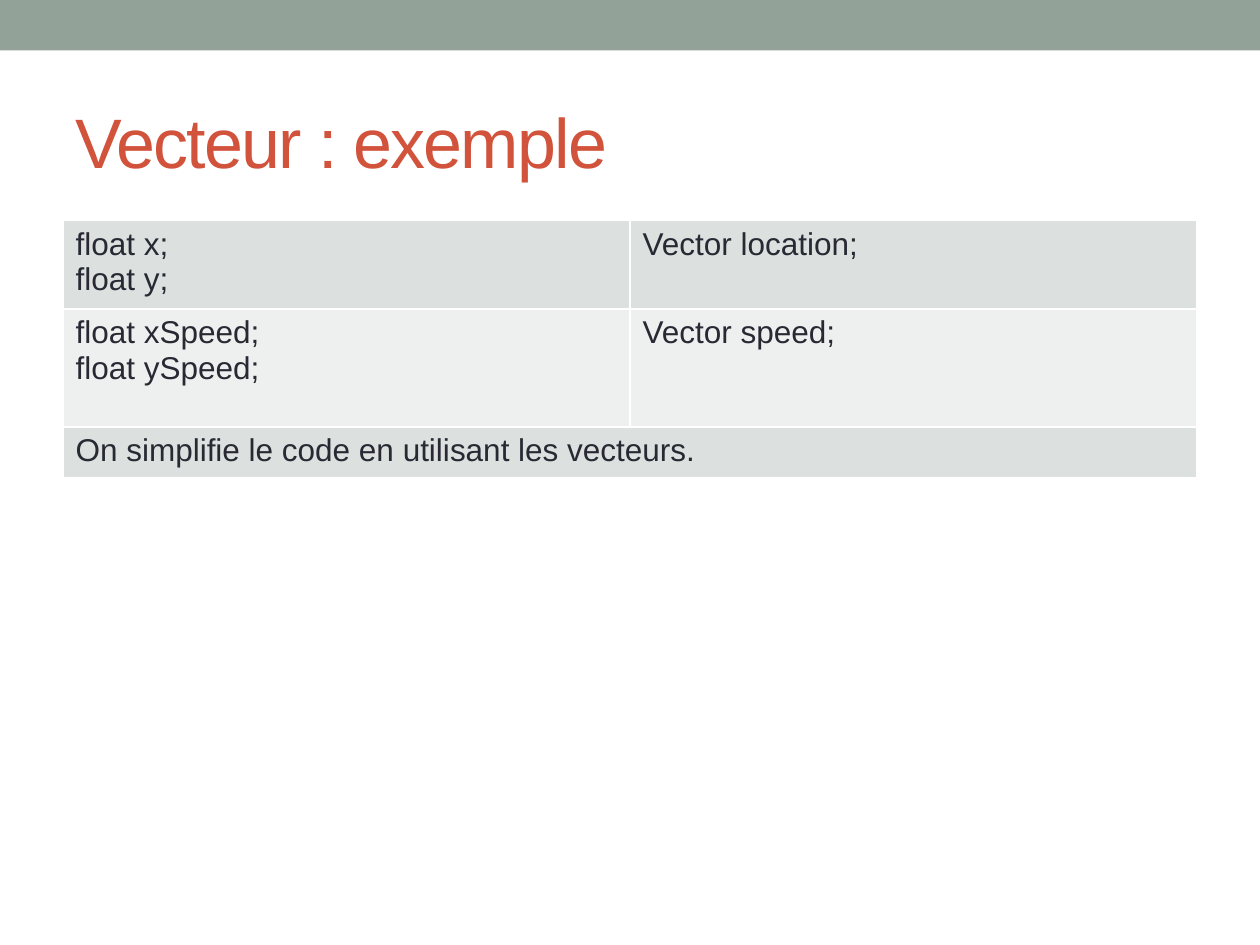
from lxml.etree import SubElement
from pptx import Presentation
from pptx.dml.color import RGBColor as RGB
from pptx.enum.shapes import MSO_SHAPE as SHAPE
from pptx.enum.text import MSO_ANCHOR as ANCHOR
from pptx.oxml.ns import qn
from pptx.util import Cm, Pt

FONT = "Arial"
COLORS = {
    "band": "93A299",
    "title": "D2533C",
    "text": "292934",
    "row_dark": "DCE0DE",
    "row_light": "EEF0EF",
    "border": "FFFFFF",
}
ROWS = [
    ("float x;\nfloat y;", "Vector location;"),
    ("float xSpeed;\nfloat ySpeed;", "Vector speed;"),
    ("On simplifie le code en utilisant les vecteurs.",),
]
ROW_HEIGHTS = [1.67, 2.38, 1.02]


def color(name):
    return RGB.from_string(COLORS[name])


def set_text(tf, text, size, color_name):
    tf.text = text
    for p in tf.paragraphs:
        for r in p.runs:
            r.font.name = FONT
            r.font.size = Pt(size)
            r.font.color.rgb = color(color_name)


def add_band(s, width, height):
    sp = s.shapes.add_shape(SHAPE.RECTANGLE, 0, 0, width, height)
    sp.shadow.inherit = False
    sp.fill.solid()
    sp.fill.fore_color.rgb = color("band")
    sp.line.fill.background()


def add_title(s, text):
    sp = s.shapes.add_textbox(Cm(1.27), Cm(1.47), Cm(22.86), Cm(2.74))
    tf = sp.text_frame
    tf.word_wrap = True
    tf.vertical_anchor = ANCHOR.MIDDLE
    set_text(tf, text, 40, "title")
    # Tighter letter spacing, in hundredths of a point
    tf.paragraphs[0].runs[0].font._element.set("spc", "-100")


def set_borders(cell):
    tc_pr = cell._tc.get_or_add_tcPr()
    for side in ("lnL", "lnR", "lnT", "lnB"):
        ln = SubElement(tc_pr, qn(f"a:{side}"), w=str(Pt(1)))
        fill = SubElement(ln, qn("a:solidFill"))
        SubElement(fill, qn("a:srgbClr"), val=COLORS["border"])


def add_code_table(s):
    frame = s.shapes.add_table(len(ROWS), 2, Cm(1.27), Cm(4.45),
                               Cm(22.86), Cm(sum(ROW_HEIGHTS)))
    table = frame.table
    table.first_row = False
    for i, (texts, height) in enumerate(zip(ROWS, ROW_HEIGHTS)):
        table.rows[i].height = Cm(height)
        for cell in table.rows[i].cells:
            set_borders(cell)
            cell.fill.solid()
            cell.fill.fore_color.rgb = color("row_light" if i % 2 else "row_dark")
        for j, text in enumerate(texts):
            set_text(table.cell(i, j).text_frame, text, 18, "text")
        # A single text spans the whole row
        if len(texts) == 1:
            table.cell(i, 0).merge(table.cell(i, 1))


def main():
    prs = Presentation()
    prs.slide_width, prs.slide_height = Cm(25.4), Cm(19.05)
    s = prs.slides.add_slide(prs.slide_layouts[6])

    # Header
    add_band(s, prs.slide_width, Cm(1.02))
    add_title(s, "Vecteur : exemple")

    # Code with and without vectors
    add_code_table(s)

    prs.save("out.pptx")


if __name__ == "__main__":
    main()
